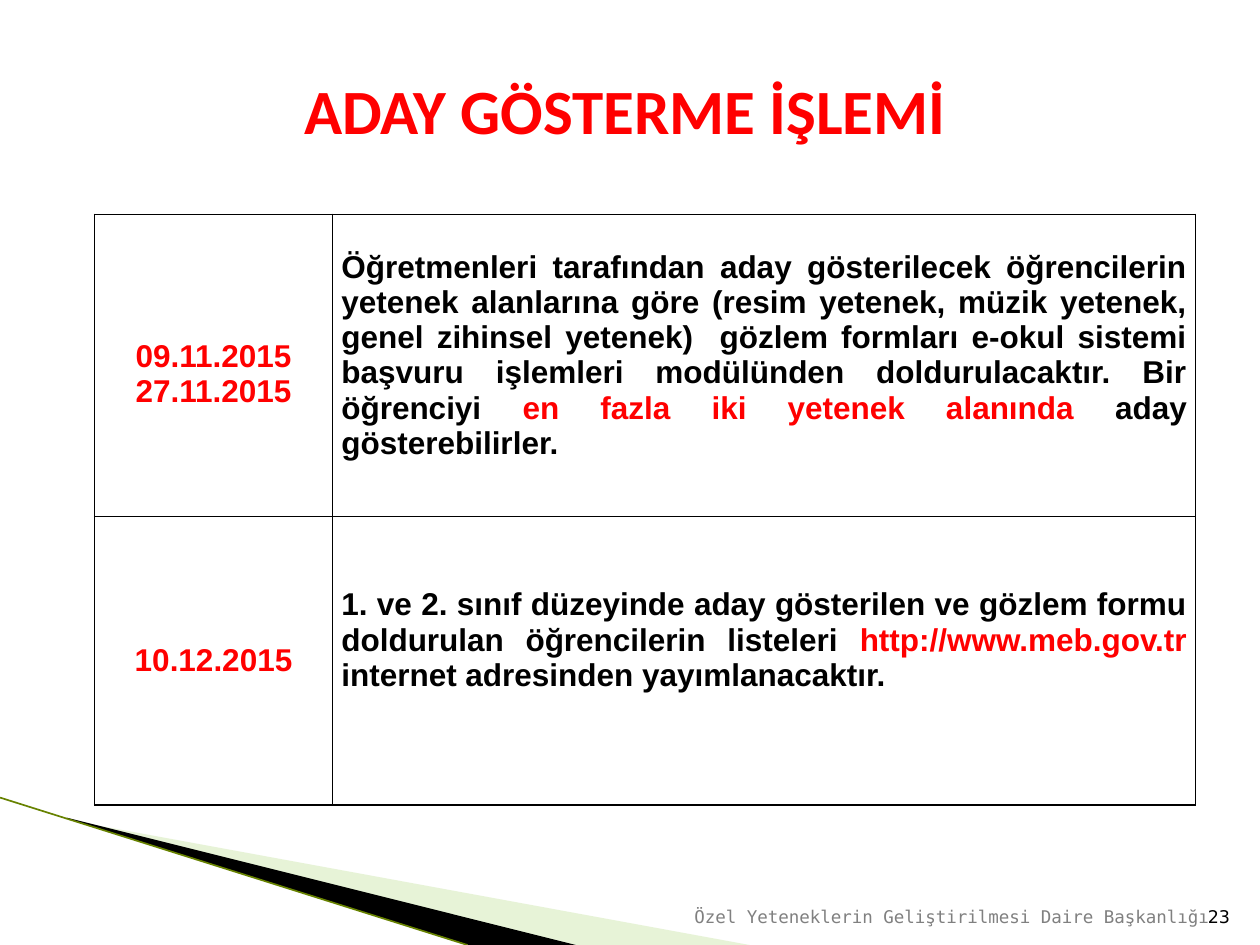
from lxml import etree
from pptx import Presentation
from pptx.dml.color import RGBColor
from pptx.enum.shapes import MSO_CONNECTOR
from pptx.enum.text import MSO_ANCHOR, MSO_AUTO_SIZE, PP_ALIGN
from pptx.oxml.ns import qn
from pptx.util import Inches, Pt

LEFT, CENTER, RIGHT, JUSTIFY = PP_ALIGN.LEFT, PP_ALIGN.CENTER, PP_ALIGN.RIGHT, PP_ALIGN.JUSTIFY
TOP, MIDDLE, BOTTOM = MSO_ANCHOR.TOP, MSO_ANCHOR.MIDDLE, MSO_ANCHOR.BOTTOM
COLORS = {"red": "FF0000", "black": "000000", "gray": "808080", "green": "C3E19D", "olive": "678200"}
RGB = {name: RGBColor.from_string(value) for name, value in COLORS.items()}

prs = Presentation()
prs.slide_width, prs.slide_height = Inches(10), Inches(7.5)
COL, ROW = prs.slide_width / 100, prs.slide_height / 100
s = prs.slides.add_slide(prs.slide_layouts[5])


def grid(*shares):
    return [round(v * (ROW if i % 2 else COL)) for i, v in enumerate(shares)]


def write(tf, paragraphs, size=18, font="Arial", bold=True, align=LEFT, anchor=TOP, first_spacing=None):
    tf.word_wrap = True
    tf.vertical_anchor = anchor
    for i, runs in enumerate(paragraphs):
        p = tf.paragraphs[0] if i == 0 else tf.add_paragraph()
        p.alignment = align
        if i == 0 and first_spacing:
            p.line_spacing = first_spacing
        for text, color in runs:
            r = p.add_run()
            r.text = text
            r.font.size, r.font.name, r.font.bold = Pt(size), font, bold
            r.font.color.rgb = RGB[color]


wedges = [
    ("green", 40, [(5.5, 86.8), (59.5, 100), (45.6, 100), (5.5, 86.67)]),
    ("black", 100, [(5.3, 86.53), (45.7, 100), (37.2, 100), (5.4, 86.67)]),
]
for color, opacity, points in wedges:
    start, *rest = [grid(*point) for point in points]
    builder = s.shapes.build_freeform(*start)
    builder.add_line_segments(rest, close=True)
    sp = builder.convert_to_shape()
    sp.shadow.inherit = False
    sp.fill.solid()
    sp.fill.fore_color.rgb = RGB[color]
    sp.line.fill.background()
    if opacity < 100:
        clr = sp.fill._xPr.find(qn("a:solidFill"))[0]
        etree.SubElement(clr, qn("a:alpha"), val=str(opacity * 1000))

edge = s.shapes.add_connector(MSO_CONNECTOR.STRAIGHT, *grid(0, 84.4, 37.1, 100))
edge.line.color.rgb = RGB["olive"]
edge.line.width = Pt(0.95)
etree.SubElement(edge._element.spPr, qn("a:effectLst"))

title = s.shapes.title
title.left, title.top, title.width, title.height = grid(11.4, 6.93, 76.4, 14.8)
title.text_frame.auto_size = MSO_AUTO_SIZE.NONE
write(title.text_frame, [[("ADAY GÖSTERME İŞLEMİ", "red")]], size=36, font="Calibri", align=CENTER)

footers = [
    (94.6, 4, "23", "DejaVu Sans", "black"),
    (53.1, 43.8, "Özel Yeteneklerin Geliştirilmesi Daire Başkanlığı", "DejaVu Sans Mono", "gray"),
]
for left, width, text, font, color in footers:
    box = s.shapes.add_textbox(*grid(left, 93.47, width, 5.33))
    write(box.text_frame, [[(text, color)]], size=10, font=font, bold=False, align=RIGHT, anchor=BOTTOM)

rows = [
    (32, 0.28, 1.5, [[("09.11.2015", "red")], [("27.11.2015", "red")]], [
        ("Öğretmenleri tarafından aday gösterilecek öğrencilerin yetenek alanlarına göre "
         "(resim yetenek, müzik yetenek, genel zihinsel yetenek)  gözlem formları e-okul sistemi "
         "başvuru işlemleri modülünden doldurulacaktır. Bir öğrenciyi ", "black"),
        ("en fazla iki yetenek alanında ", "red"),
        ("aday gösterebilirler. ", "black"),
    ]),
    (30.53, 0.56, None, [[("10.12.2015", "red")]], [
        ("1. ve 2. sınıf düzeyinde aday gösterilen ve gözlem formu doldurulan öğrencilerin listeleri ", "black"),
        ("http://www.meb.gov.tr ", "red"),
        ("internet adresinden yayımlanacaktır.", "black"),
    ]),
]
table = s.shapes.add_table(len(rows), 2, *grid(7.5, 22.67, 87.4, 62.53)).table
table.first_row = table.horz_banding = False
for column, width in zip(table.columns, (18.9, 68.5)):
    column.width = round(width * COL)
for i, (height, top_gap, spacing, dates, description) in enumerate(rows):
    table.rows[i].height = round(height * ROW)
    date_cell, text_cell = table.cell(i, 0), table.cell(i, 1)
    for cell in (date_cell, text_cell):
        cell.margin_left = cell.margin_right = Inches(0.07)
        cell.margin_top = cell.margin_bottom = 0
        tcPr = cell._tc.get_or_add_tcPr()
        for side in ("lnL", "lnR", "lnT", "lnB"):
            ln = etree.SubElement(tcPr, qn(f"a:{side}"), w=str(Pt(1)))
            fill = etree.SubElement(ln, qn("a:solidFill"))
            etree.SubElement(fill, qn("a:srgbClr"), val=COLORS["black"])
        cell.fill.background()
    text_cell.margin_top = Inches(top_gap)
    write(date_cell.text_frame, dates, align=CENTER, first_spacing=spacing)
    date_cell.vertical_anchor = MIDDLE
    write(text_cell.text_frame, [description], align=JUSTIFY)

prs.save("out.pptx")
